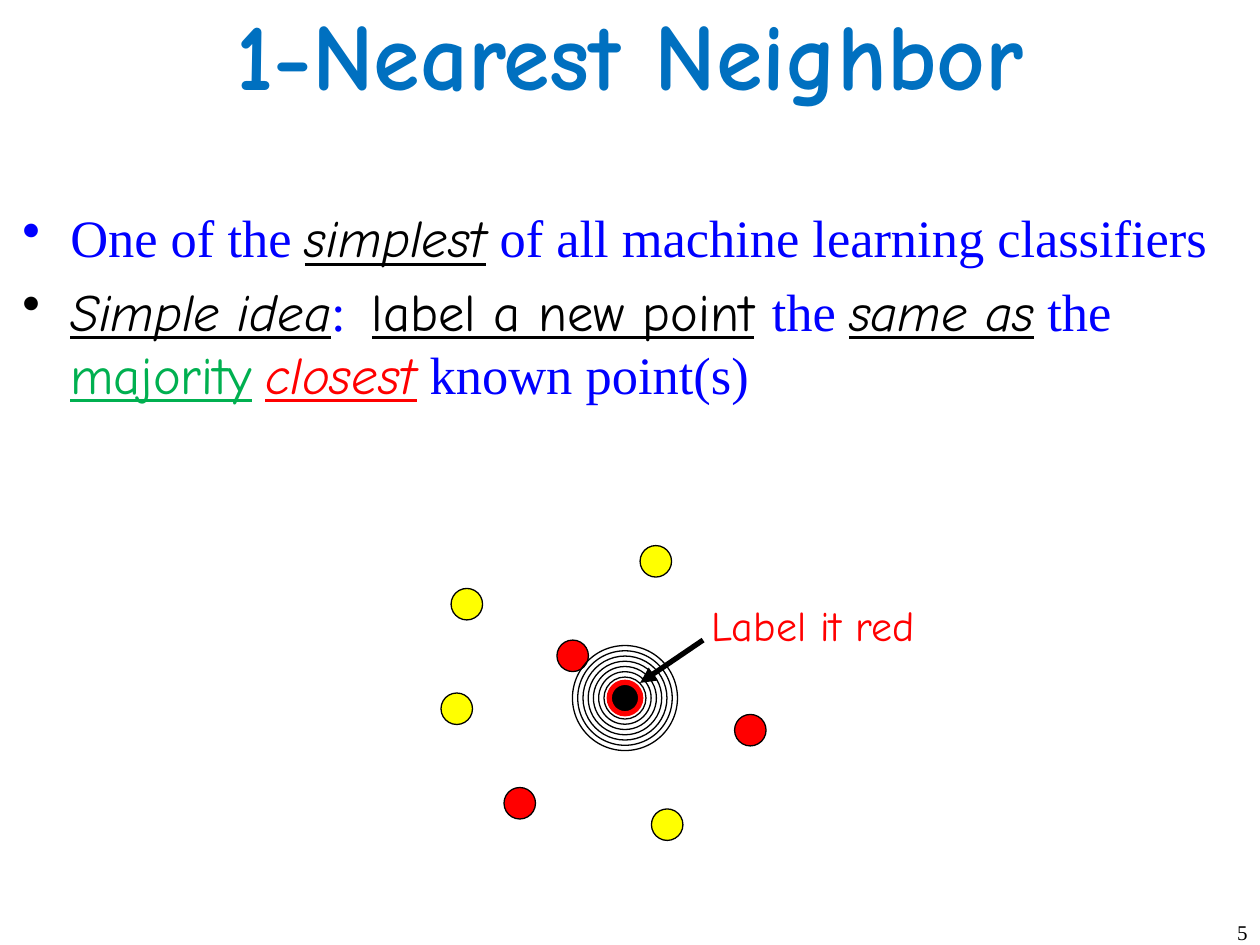
import pptx
import pptx.util
import pptx.dml.color
import pptx.enum.shapes
import pptx.enum.text
import pptx.oxml
import pptx.oxml.ns

Inches, Pt = pptx.util.Inches, pptx.util.Pt
Align = pptx.enum.text.PP_ALIGN
Anchor = pptx.enum.text.MSO_ANCHOR

COLORS = {
    "title": "0070C0", "blue": "0000FF", "black": "000000",
    "green": "00B050", "red": "FF0000", "yellow": "FFFF00",
}
HAND, SERIF = "Comic Neue", "Times New Roman"

STYLES = {
    "plain": (SERIF, "blue", False, False),
    "key": (HAND, "black", True, True),
    "line": (HAND, "black", False, True),
    "gap": (HAND, "black", False, False),
    "green": (HAND, "green", False, True),
    "red": (HAND, "red", True, True),
}

BULLETS = [
    [("One of the ", "plain"), ("simplest", "key"),
     (" of all machine learning classifiers", "plain")],
    [("Simple idea", "key"), (":  ", "plain"), ("label a new point", "line"),
     (" ", "gap"), ("the ", "plain"), ("same as", "key"), (" the ", "plain"),
     ("majority", "green"), (" ", "plain"), ("closest", "red"),
     (" known point(s)", "plain")],
]

LABELS = [
    ("1-Nearest Neighbor", (0, 0, 10, 0.83), HAND, 54, "title", True, Align.CENTER, Anchor.MIDDLE, True),
    ("Label it red", (5.44, 4.71, 2.03, 0.5), HAND, 24, "red", False, Align.CENTER, Anchor.TOP, False),
    ("5", (7.92, 7.25, 2.08, 0.25), SERIF, 12, "black", False, Align.RIGHT, Anchor.TOP, True),
]

DOT = 0.25
POINTS = [
    (3.58, 4.67, "yellow"), (4, 6.25, "red"), (5.08, 4.33, "yellow"),
    (3.5, 5.5, "yellow"), (5.83, 5.67, "red"), (4.42, 5.08, "red"),
    (5.17, 6.42, "yellow"),
]
CENTER = (4.96, 5.54)
RINGS = [step / 12 for step in range(10, 3, -1)]
ARROW = (5.08, 5.42, 5.58, 5.08)


def paint(name):
    return pptx.dml.color.RGBColor.from_string(COLORS[name])


def add_box(slide, area, wrap=True, anchor=Anchor.TOP):
    frame = slide.shapes.add_textbox(*map(Inches, area)).text_frame
    frame.word_wrap = wrap
    frame.vertical_anchor = anchor
    return frame


def set_font(run, face, size, color):
    run.font.name = face
    run.font.size = Pt(size)
    run.font.color.rgb = paint(color)


def add_label(slide, text, area, face, size, color, bold, align, anchor, wrap):
    frame = add_box(slide, area, wrap, anchor)
    frame.text = text
    para = frame.paragraphs[0]
    para.alignment = align
    set_font(para.runs[0], face, size, color)
    para.runs[0].font.bold = bold


def add_bullets(slide):
    frame = add_box(slide, (0.08, 1.58, 9.83, 2.25))
    for index, parts in enumerate(BULLETS):
        para = frame.add_paragraph() if index else frame.paragraphs[0]
        para.space_before = Pt(6)
        props = para._p.get_or_add_pPr()
        props.set("marL", str(Inches(0.38)))
        props.set("indent", str(-Inches(0.38)))
        mark = pptx.oxml.parse_xml(
            f'<a:buChar {pptx.oxml.ns.nsdecls("a")} char="•"/>')
        props.append(mark)
        for text, style in parts:
            face, color, slant, under = STYLES[style]
            run = para.add_run()
            run.text = text
            set_font(run, face, 30, color)
            run.font.italic = slant
            run.font.underline = under


def add_circle(slide, left, top, size, fill=None, line="black", width=0.75):
    oval = slide.shapes.add_shape(
        pptx.enum.shapes.MSO_SHAPE.OVAL, *map(Inches, (left, top, size, size)))
    oval.shadow.inherit = False
    if fill:
        oval.fill.solid()
        oval.fill.fore_color.rgb = paint(fill)
    else:
        oval.fill.background()
    oval.line.color.rgb = paint(line)
    oval.line.width = Pt(width)


def add_arrow(slide):
    arrow = slide.shapes.add_connector(
        pptx.enum.shapes.MSO_CONNECTOR.STRAIGHT, *map(Inches, ARROW))
    arrow.line.color.rgb = paint("black")
    arrow.line.width = Pt(3)
    space = pptx.oxml.ns.nsdecls("a")
    arrow.line._get_or_add_ln().append(
        pptx.oxml.parse_xml(f'<a:headEnd {space} type="triangle"/>'))
    arrow._element.spPr.append(pptx.oxml.parse_xml(f"<a:effectLst {space}/>"))


def main():
    deck = pptx.Presentation()
    deck.slide_width, deck.slide_height = Inches(10), Inches(7.5)
    slide = deck.slides.add_slide(deck.slide_layouts[6])
    title, answer, number = LABELS
    add_label(slide, *title)
    add_bullets(slide)
    for left, top, fill in POINTS:
        add_circle(slide, left, top, DOT, fill)
    add_label(slide, *answer)
    mid_x, mid_y = CENTER
    for size in RINGS:
        add_circle(slide, mid_x - size / 2, mid_y - size / 2, size)
    add_circle(slide, mid_x - DOT / 2, mid_y - DOT / 2, DOT, "black", "red", 3)
    add_arrow(slide)
    add_label(slide, *number)
    deck.save("out.pptx")


if __name__ == "__main__":
    main()
